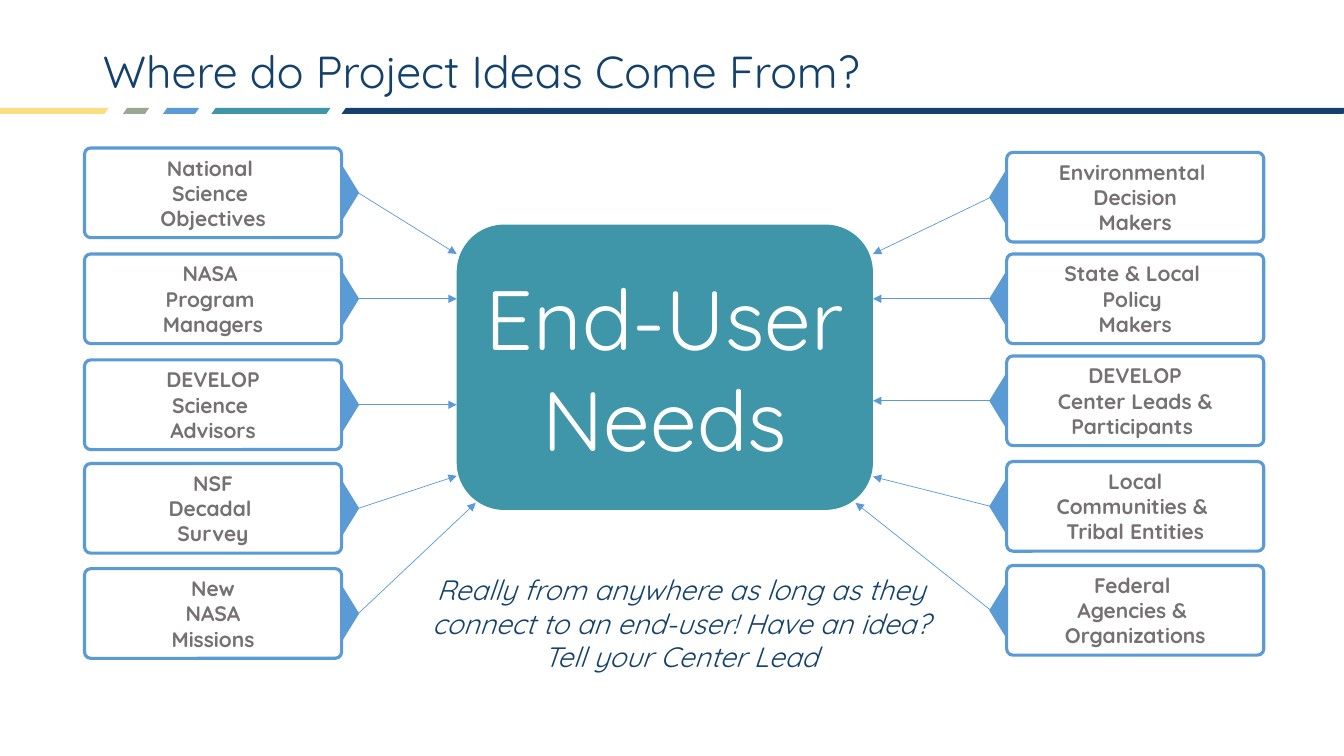
"""Build the slide on where project ideas come from."""
from dataclasses import dataclass

from lxml.etree import SubElement
from pptx import Presentation
from pptx.dml.color import RGBColor
from pptx.enum.shapes import MSO_CONNECTOR, MSO_SHAPE
from pptx.enum.text import MSO_ANCHOR, MSO_AUTO_SIZE, PP_ALIGN
from pptx.oxml.ns import qn
from pptx.shapes.autoshape import Shape
from pptx.slide import Slide
from pptx.text.text import TextFrame
from pptx.util import Cm, Pt

FONT = "Quicksand"
NAVY, TEAL, BLUE = "13416C", "3E96A8", "5B9BD5"
GREY, WHITE = "767171", "FFFFFF"
BOX_W, BOX_H = 6.48, 2.26
FLAP_W, FLAP_H = 2.08, 0.64


@dataclass
class Bar:
    """One slanted piece of the title rule, in cm."""
    left: float
    width: float
    fill: str


@dataclass
class Source:
    """One source of ideas, with its top and the arrow's end, in cm."""
    text: str
    top: float
    end_x: float
    end_y: float


@dataclass
class Side:
    """One column of sources, in cm."""
    left: float
    flap_x: float
    start_x: float
    turn: int
    items: list[Source]


BARS = [
    Bar(-0.1, 2.84, "FADF82"),
    Bar(3.1, 0.66, "99A893"),
    Bar(4.11, 0.91, BLUE),
    Bar(5.33, 3, TEAL),
    Bar(8.61, 25.35, NAVY),
]

SIDES = [
    Side(2.13, 8.71, 9.03, 90, [
        Source("National \nScience \nObjectives", 3.73, 11.51, 6.4),
        Source("NASA \nProgram \nManagers", 6.4, 11.51, 7.53),
        Source("DEVELOP\nScience \nAdvisors", 9.07, 11.51, 10.2),
        Source("NSF\nDecadal \nSurvey", 11.68, 11.51, 11.99),
        Source("New\nNASA\nMissions", 14.33, 11.99, 12.67),
    ]),
    Side(25.37, 25.27, 24.97, 270, [
        Source("Environmental \nDecision\nMakers", 3.84, 22, 6.4),
        Source("State & Local \nPolicy \nMakers", 6.4, 22, 7.53),
        Source("DEVELOP\nCenter Leads & Participants ", 8.97, 22, 10.1),
        Source("Local\nCommunities & \nTribal Entities", 11.63, 22, 12.01),
        Source("Federal \nAgencies & \nOrganizations", 14.25, 21.56, 12.67),
    ]),
]


def paint(hue: str) -> RGBColor:
    """Turn a hex string into a colour."""
    return RGBColor.from_string(hue)


def write(frame: TextFrame, text: str, size: float, hue: str,
          align: PP_ALIGN = PP_ALIGN.CENTER, bold: bool = False,
          slant: bool = False) -> None:
    """Fill a frame with evenly styled text."""
    frame.text = text
    frame.word_wrap = True
    for para in frame.paragraphs:
        para.alignment = align
        for run in para.runs:
            font = run.font
            font.name, font.size = FONT, Pt(size)
            font.bold, font.italic = bold, slant
            font.color.rgb = paint(hue)


def draw(slide: Slide, kind: MSO_SHAPE, left: float, top: float, width: float,
         height: float, fill: str, line: float = 0) -> Shape:
    """Add a flat shape, with a blue outline if line is set."""
    shape = slide.shapes.add_shape(kind, Cm(left), Cm(top), Cm(width), Cm(height))
    shape.shadow.inherit = False
    shape.fill.solid()
    shape.fill.fore_color.rgb = paint(fill)
    if line:
        shape.line.color.rgb = paint(BLUE)
        shape.line.width = Pt(line)
    else:
        shape.line.fill.background()
    return shape


def point(slide: Slide, x: float, y: float, end_x: float, end_y: float) -> None:
    """Add a thin blue arrow."""
    arrow = slide.shapes.add_connector(
        MSO_CONNECTOR.STRAIGHT, Cm(x), Cm(y), Cm(end_x), Cm(end_y))
    arrow.line.color.rgb = paint(BLUE)
    arrow.line.width = Pt(0.5)
    props = arrow.element.spPr
    SubElement(props.find(qn("a:ln")), qn("a:tailEnd"), type="triangle")
    SubElement(props, qn("a:effectLst"))


def add_source(slide: Slide, side: Side, item: Source) -> None:
    """Add a source box with its flap behind it."""
    mid = item.top + BOX_H / 2
    flap = draw(slide, MSO_SHAPE.ISOSCELES_TRIANGLE, side.flap_x - FLAP_W / 2,
                mid - FLAP_H / 2, FLAP_W, FLAP_H, BLUE, 1)
    flap.rotation = side.turn
    box = draw(slide, MSO_SHAPE.ROUNDED_RECTANGLE, side.left, item.top,
               BOX_W, BOX_H, WHITE, 2.25)
    box.adjustments[0] = 0.07
    box.text_frame.vertical_anchor = MSO_ANCHOR.MIDDLE
    write(box.text_frame, item.text, 15, GREY, bold=True)


def add_title(slide: Slide) -> None:
    """Place the title and the rule below it."""
    title = slide.shapes.title
    title.left, title.top = Cm(2.34), Cm(1.02)
    title.width, title.height = Cm(29.21), Cm(1.7)
    frame = title.text_frame
    write(frame, "Where do Project Ideas Come From?", 32, NAVY, PP_ALIGN.LEFT)
    frame.auto_size = MSO_AUTO_SIZE.NONE
    frame.vertical_anchor = MSO_ANCHOR.MIDDLE
    frame.paragraphs[0].line_spacing = 0.9
    for bar in BARS:
        shape = draw(slide, MSO_SHAPE.PARALLELOGRAM, bar.left, 2.72,
                     bar.width, 0.15, bar.fill)
        shape.adjustments[0] = 0.7


def main() -> None:
    """Build and save the deck."""
    deck = Presentation()
    deck.slide_width, deck.slide_height = Cm(33.87), Cm(19.05)
    slide = deck.slides.add_slide(deck.slide_layouts[5])
    add_title(slide)

    for side in SIDES:
        for item in side.items:
            add_source(slide, side, item)

    core = draw(slide, MSO_SHAPE.ROUNDED_RECTANGLE, 11.51, 5.66, 10.49, 7.19, TEAL)
    core.text_frame.vertical_anchor = MSO_ANCHOR.MIDDLE
    write(core.text_frame, "End-User Needs", 60, WHITE)

    for side in SIDES:
        for item in side.items:
            point(slide, side.start_x, item.top + BOX_H / 2, item.end_x, item.end_y)

    note = slide.shapes.add_textbox(Cm(10.52), Cm(14.3), Cm(13.28), Cm(2.82))
    write(note.text_frame, "Really from anywhere as long as they connect to an "
          "end-user! Have an idea? Tell your Center Lead", 20, NAVY, slant=True)
    deck.save("out.pptx")


if __name__ == "__main__":
    main()
